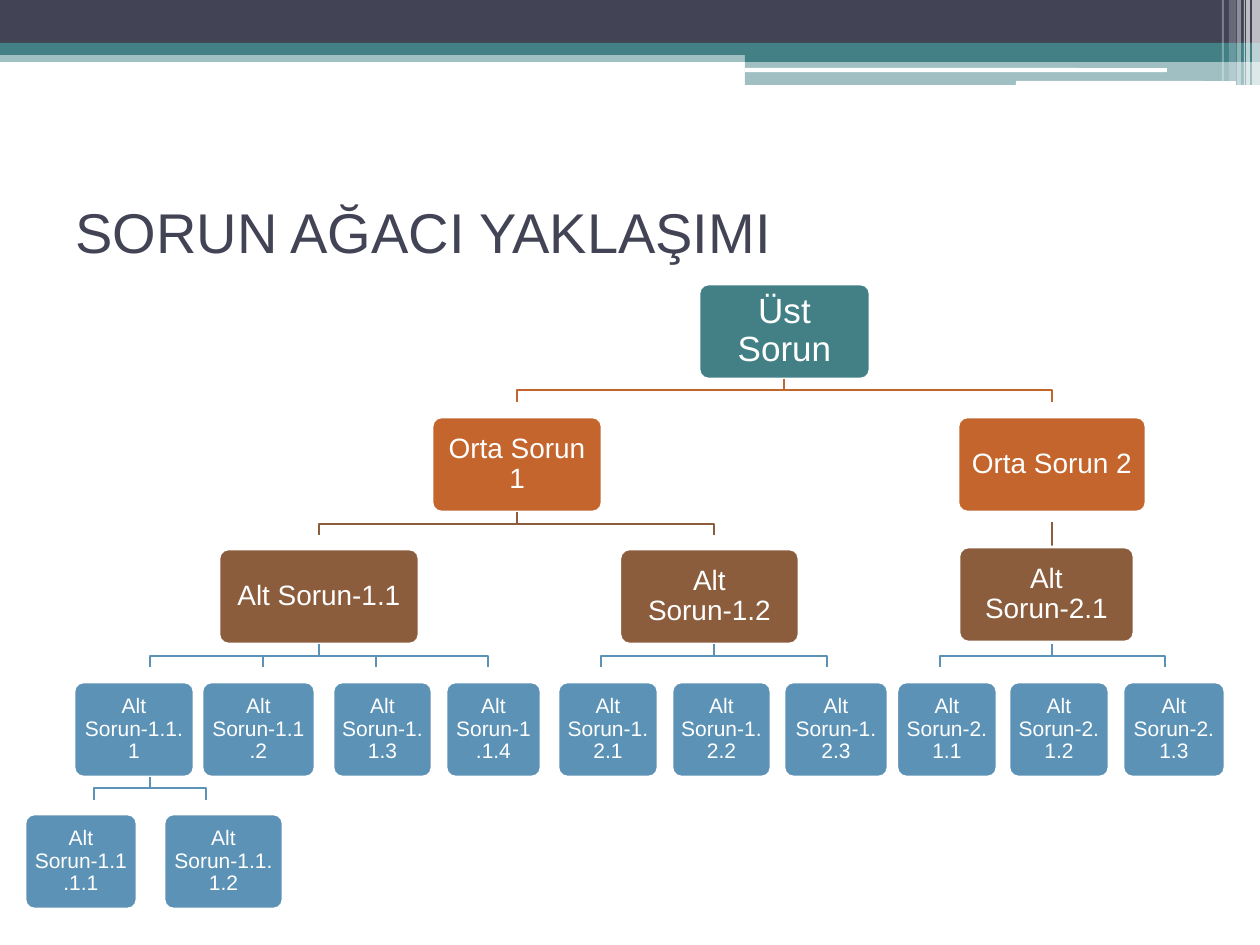
from lxml import etree
from pptx import Presentation
from pptx import util as u
from pptx.dml.color import RGBColor
from pptx.enum import shapes, text
from pptx.oxml import ns

THEME = {
    "font": "Arial", "title": 32, "line": 1.5,
    "teal": "438086", "navy": "424456", "white": "FFFFFF",
    "orange": "C4652D", "brown": "8B5D3D", "blue": "5C92B5",
}

TITLE = "SORUN AĞACI YAKLAŞIMI"

# left, top, width, height, colour, opacity in percent
BANDS = [
    (0, 50, 1260, 12, "teal", 50),
    (0, 0, 1260, 43, "navy", 100),
    (0, 43, 1260, 12, "teal", 100),
    (745, 49, 515, 13, "teal", 100),
    (745, 62, 515, 23, "teal", 50),
]
PILLS = [
    (745, 68, 422, 4, "white", 100),
    (1016, 81, 220, 5, "white", 100),
]
STRIPES = [
    (1252, 0, 8, 85, "white", 65),
    (1246, 0, 4, 85, "white", 65),
    (1244, 0, 1, 85, "white", 60),
    (1237, 0, 4, 85, "white", 40),
    (1229, 0, 7, 81, "white", 20),
    (1222, 0, 2, 81, "white", 30),
]

# top, colour, type size of each level
LEVELS = [
    (284, "teal", 20),
    (417, "orange", 16),
    (549, "brown", 16),
    (682, "blue", 12),
    (814, "blue", 12),
]

# name, column, left, width, children
TREE = ("Üst Sorun", 5.625, 699, 171, [
    ("Orta Sorun 1", 3.25, 432, 170, [
        ("Alt Sorun-1.1", 1.5, 219, 200, [
            ("Alt Sorun-1.1.1", 0, 74, 120, [
                ("Alt Sorun-1.1.1.1", -0.5, 25, 112, []),
                ("Alt Sorun-1.1.1.2", 0.5, 164, 119, []),
            ]),
            ("Alt Sorun-1.1.2", 1, 202, 113, []),
            ("Alt Sorun-1.1.3", 2, 333, 99, []),
            ("Alt Sorun-1.1.4", 3, 446, 95, []),
        ]),
        ("Alt Sorun-1.2", 5, 620, 179, [
            ("Alt Sorun-1.2.1", 4, 558, 100, []),
            ("Alt Sorun-1.2.2", 5, 672, 99, []),
            ("Alt Sorun-1.2.3", 6, 784, 104, []),
        ]),
    ]),
    ("Orta Sorun 2", 8, 958, 188, [
        ("Alt Sorun-2.1", 8, 959, 175, [
            ("Alt Sorun-2.1.1", 7, 897, 100, []),
            ("Alt Sorun-2.1.2", 8, 1009, 100, []),
            ("Alt Sorun-2.1.3", 9, 1123, 102, []),
        ]),
    ]),
])

SCALE = u.Inches(1) / 126
TALL = 95       # box height
DROP = 11.5     # each vertical leg of a wire
LIFT = 2        # an only child sits this much higher
PAD = 6


def px(n):
    return u.Emu(round(n * SCALE))


def hook(col):
    """Centre of a column, where its wires meet."""
    return 150 + 112.8 * col


def tint(name):
    return RGBColor.from_string(THEME[name])


def paint(shape, name, alpha=100):
    shape.shadow.inherit = False
    shape.fill.solid()
    shape.fill.fore_color.rgb = tint(name)
    shape.line.fill.background()
    if alpha < 100:
        clr = shape.fill._xPr.find(".//" + ns.qn("a:srgbClr"))
        etree.SubElement(clr, ns.qn("a:alpha")).set("val", str(alpha * 1000))


def write(frame, words, size, color, align):
    frame.word_wrap = True
    frame.vertical_anchor = text.MSO_ANCHOR.MIDDLE
    para = frame.paragraphs[0]
    para.alignment = align
    run = para.add_run()
    run.text = words
    run.font.name = THEME["font"]
    run.font.size = u.Pt(size)
    run.font.color.rgb = tint(color)
    return para


def block(slide, kind, item):
    *at, color, alpha = item
    shape = slide.shapes.add_shape(kind, *map(px, at))
    paint(shape, color, alpha)


def wire(slide, points, color):
    pen = slide.shapes.build_freeform(*points[0], scale=SCALE)
    pen.add_line_segments(points[1:], close=False)
    shape = pen.convert_to_shape()
    shape.shadow.inherit = False
    shape.fill.background()
    shape.line.color.rgb = tint(color)
    shape.line.width = u.Pt(THEME["line"])


def link(slide, start, end, base, only, color):
    """Wire a parent to a child; a middle child needs none."""
    low, mid = base + 2 * DROP, base + DROP
    if only:
        wire(slide, [(end, base + 10), (end, base + 34)], color)
    elif start != end:
        wire(slide, [(start, base), (start, mid), (end, mid), (end, low)], color)


def grow(slide, node, depth=0, lift=0):
    """Draw a node and everything below it."""
    name, col, left, width, kids = node
    top, color, size = LEVELS[depth]
    box = slide.shapes.add_shape(shapes.MSO_SHAPE.ROUNDED_RECTANGLE,
                                 px(left), px(top - lift), px(width), px(TALL))
    box.adjustments[0] = 0.1
    paint(box, color)
    box.line.color.rgb = tint("white")
    box.line.width = u.Pt(THEME["line"])
    frame = box.text_frame
    frame.margin_left = frame.margin_right = px(PAD)
    frame.margin_top = frame.margin_bottom = px(PAD)
    para = write(frame, name, size, "white", text.PP_ALIGN.CENTER)
    para.line_spacing = 0.9

    only = len(kids) == 1
    for kid in kids:
        link(slide, hook(col), hook(kid[1]), top + TALL, only,
             LEVELS[depth + 1][1])
        grow(slide, kid, depth + 1, LIFT if only else 0)


def main():
    deck = Presentation()
    deck.slide_width, deck.slide_height = px(1260), px(945)
    slide = deck.slides.add_slide(deck.slide_layouts[5])

    head = slide.shapes.title
    head.left, head.top, head.width, head.height = map(px, (63, 158, 1134, 147))
    write(head.text_frame, TITLE, THEME["title"], "navy", text.PP_ALIGN.LEFT)

    for kind, items in ((shapes.MSO_SHAPE.RECTANGLE, BANDS),
                        (shapes.MSO_SHAPE.ROUNDED_RECTANGLE, PILLS),
                        (shapes.MSO_SHAPE.RECTANGLE, STRIPES)):
        for item in items:
            block(slide, kind, item)
    grow(slide, TREE)
    deck.save("out.pptx")


if __name__ == "__main__":
    main()
